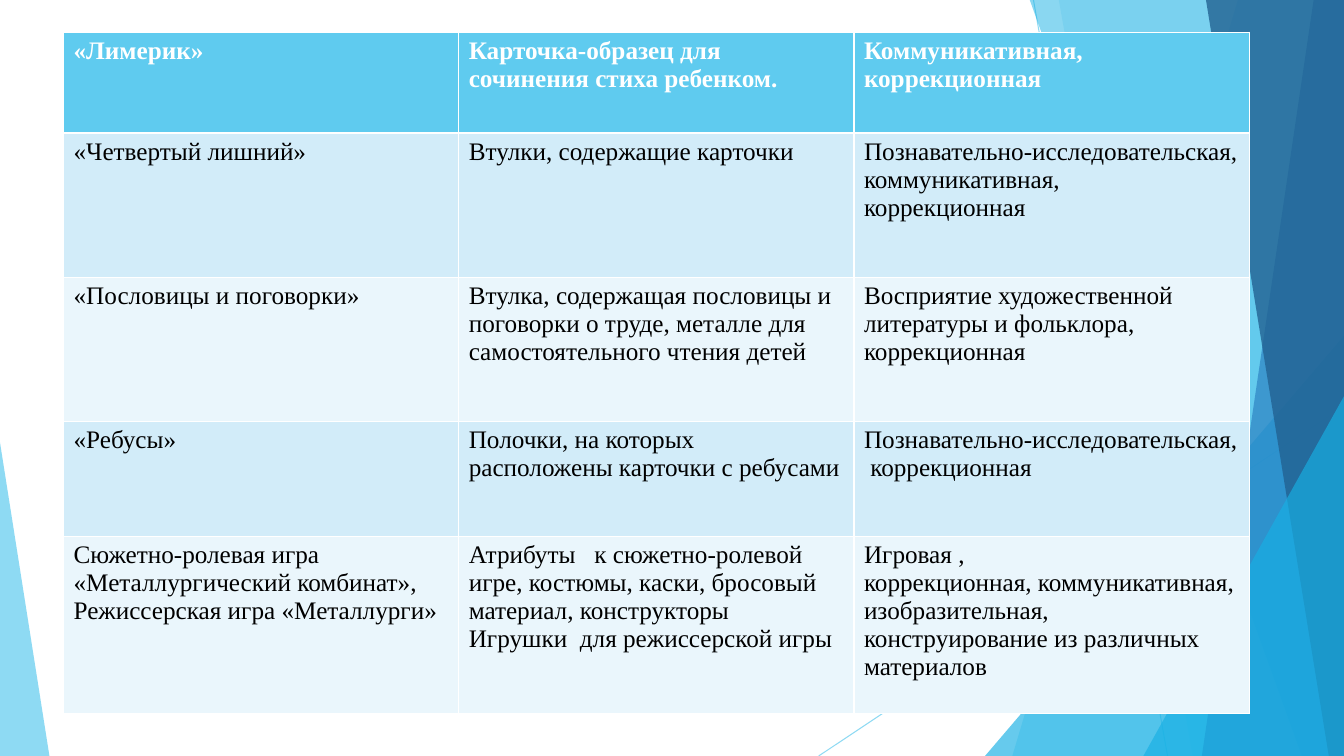
from lxml import etree
from pptx import Presentation
from pptx.dml.color import RGBColor
from pptx.enum import shapes
from pptx.oxml import ns
from pptx.util import Inches, Pt

WIDTH, HEIGHT = 13.33, 7.5
SKY, AZURE, BLUE, NAVY = "5FCBEF", "17B0E4", "2E83C3", "226292"
ROW_HEIGHTS = [1, 1.43, 1.43, 1.14, 1.76]
GAMES = [
    ("«Лимерик»",
     "Карточка-образец для сочинения стиха ребенком.",
     "Коммуникативная, коррекционная"),
    ("«Четвертый лишний»",
     "Втулки, содержащие карточки",
     "Познавательно-исследовательская,\nкоммуникативная,\nкоррекционная"),
    ("«Пословицы и поговорки»",
     "Втулка, содержащая пословицы и поговорки о труде, металле "
     "для самостоятельного чтения детей",
     "Восприятие художественной\nлитературы и фольклора, коррекционная"),
    ("«Ребусы»",
     "Полочки, на которых расположены карточки с ребусами",
     "Познавательно-исследовательская,  коррекционная"),
    ("Сюжетно-ролевая игра\n«Металлургический комбинат»,\n"
     "Режиссерская игра «Металлурги»",
     "Атрибуты   к сюжетно-ролевой игре, костюмы, каски, бросовый материал, "
     "конструкторы\nИгрушки  для режиссерской игры",
     "Игровая ,\nкоррекционная, коммуникативная, изобразительная,\n"
     "конструирование из различных материалов"),
]


def paint(fill, color, opacity=100):
    """Give a fill a solid colour with an opacity in percent."""
    fill.solid()
    fill.fore_color.rgb = RGBColor.from_string(color)
    if opacity < 100:
        for tint in fill._xPr.iter(ns.qn("a:srgbClr")):
            etree.SubElement(tint, ns.qn("a:alpha"), val=str(opacity * 1000))


def finish(shape, color, opacity):
    """Leave a shape with its fill only."""
    shape.shadow.inherit = False
    shape.line.fill.background()
    paint(shape.fill, color, opacity)


def add_ray(page, start, end):
    """Draw a thin line between two points."""
    ray = page.shapes.add_connector(
        shapes.MSO_CONNECTOR.STRAIGHT, *map(Inches, start + end))
    ray.line.width = Pt(0.75)
    paint(ray.line.fill, SKY, 70)
    etree.SubElement(ray._element.spPr, ns.qn("a:effectLst"))


def add_shard(page, top_x, bottom_x, color, opacity):
    """Fill the page to the right of a slanted edge."""
    top = -0.01
    builder = page.shapes.build_freeform(Inches(top_x), Inches(top))
    corners = [(WIDTH, top), (WIDTH, HEIGHT), (bottom_x, HEIGHT)]
    builder.add_line_segments([(Inches(x), Inches(y)) for x, y in corners])
    finish(builder.convert_to_shape(), color, opacity)


def add_peak(page, left, top, width, apex, color, opacity):
    """Stand a triangle on the bottom edge of the page."""
    peak = page.shapes.add_shape(
        shapes.MSO_SHAPE.ISOSCELES_TRIANGLE,
        *map(Inches, (left, top, width, HEIGHT - top)))
    peak.adjustments[0] = apex
    finish(peak, color, opacity)


def add_backdrop(page):
    """Layer the rays, shards and peaks from back to front."""
    add_ray(page, (10.25, 0), (11.58, HEIGHT))
    add_ray(page, (WIDTH, 4.03), (8.12, HEIGHT))
    add_shard(page, 12.28, 10.04, SKY, 36)
    add_shard(page, 10.5, 11.83, SKY, 20)
    add_peak(page, 9.77, 3.33, 3.56, 1, AZURE, 66)
    add_shard(page, 10.21, 12.91, AZURE, 50)
    add_shard(page, 13.03, 11.92, BLUE, 70)
    add_shard(page, 11.96, 13.18, NAVY, 80)
    add_peak(page, 11.34, 3.93, 1.99, 1, AZURE, 66)
    add_peak(page, 0, 4.39, 0.49, 0, SKY, 70)


def add_games_table(page, left, top, width):
    """Build the table of games with a header and banded rows."""
    columns = len(GAMES[0])
    table = page.shapes.add_table(
        len(GAMES), columns,
        *map(Inches, (left, top, width, sum(ROW_HEIGHTS)))).table
    for column in table.columns:
        column.width = Inches(width / columns)
    for index, (height, game) in enumerate(zip(ROW_HEIGHTS, GAMES)):
        table.rows[index].height = Inches(height)
        header = index == 0
        band = SKY if header else ("EAF6FC", "D2ECF9")[index % 2]
        for cell, words in zip(table.rows[index].cells, game):
            paint(cell.fill, band)
            cell.text = words
            for para in cell.text_frame.paragraphs:
                para.font.name = "Times New Roman"
                para.font.size = Pt(18)
                para.font.bold = header
                para.font.color.rgb = RGBColor.from_string(
                    "FFFFFF" if header else "000000")


def main():
    """Create the deck and save it."""
    deck = Presentation()
    deck.slide_width, deck.slide_height = Inches(WIDTH), Inches(HEIGHT)
    page = deck.slides.add_slide(deck.slide_layouts[6])
    add_backdrop(page)
    add_games_table(page, 0.63, 0.32, 11.76)
    deck.save("out.pptx")


if __name__ == "__main__":
    main()
